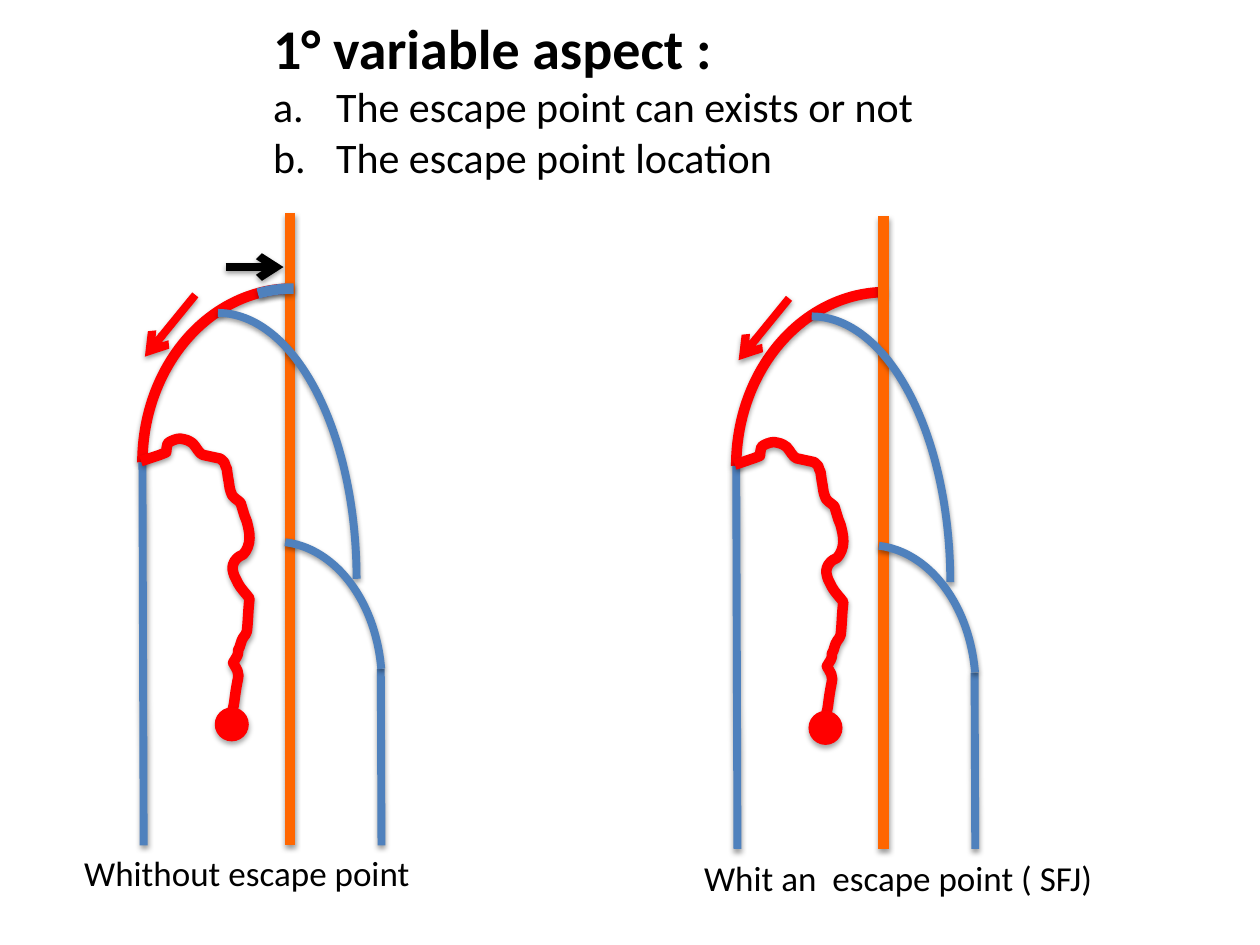
from dataclasses import dataclass
from typing import Optional

from lxml import etree
from pptx import Presentation
from pptx import util as u
from pptx.dml.color import RGBColor
from pptx.enum import shapes, text
from pptx.oxml.ns import qn


@dataclass(frozen=True)
class Theme:
    font: str = "Calibri"
    ink: str = "000000"
    reflux: str = "FF0000"
    deep: str = "FF6600"
    vein: str = "4F81BD"
    heading: float = 32
    item: float = 24
    caption: float = 20
    thick: float = 6
    thin: float = 4.5
    outline: float = 0.75


@dataclass(frozen=True)
class Vessel:
    start: tuple
    end: tuple
    color: str
    width: float
    arrow: bool = False


@dataclass(frozen=True)
class Arch:
    box: tuple
    color: str
    width: float
    flip: bool = False
    angles: Optional[tuple] = None


@dataclass(frozen=True)
class Paragraph:
    content: str
    size: float
    bold: bool = False
    lettered: bool = False


@dataclass(frozen=True)
class Diagram:
    dx: float
    dy: float
    caption: str
    caption_box: tuple
    extras: tuple = ()


THEME = Theme()
TRUNK_ARCH_BOX = (81.4, 164.9, 171.4, 198.7)

ANATOMY = (
    Arch(TRUNK_ARCH_BOX, THEME.reflux, THEME.thick, flip=True),
    Vessel((165.6, 121.7), (165.6, 483.1), THEME.deep, THEME.thick),
    Arch((45.4, 178.8, 158.4, 303.8), THEME.vein, THEME.thin),
    Vessel((81.4, 264.2), (82.1, 483.1), THEME.vein, THEME.thin),
    Vessel((217.6, 382.3), (218, 483.1), THEME.vein, THEME.thin),
    Arch((97.2, 309.6, 121, 163.4), THEME.vein, THEME.thin, angles=(164.21, 210.86)),
)
REFLUX_ARROW = Vessel((111.6, 168.5), (82.8, 203.8), THEME.reflux, THEME.thin, arrow=True)
COMPETENT_JUNCTION = (
    Arch((82.1, 164.9, 171.4, 198.7), THEME.vein, THEME.thick, flip=True, angles=(162, 169.17)),
    Vessel((128.9, 152.6), (162, 152.6), THEME.ink, THEME.thin, arrow=True),
)
ENTRY_POINT = (123.1, 404.6, 18.7, 18.7)

VARICOSE_START = (80.6, 263.5)
VARICOSE_PATH = (
    ((91.4, 259.9),),
    ((95, 258.5),),
    ((95.4, 257), (95, 254.9), (95.8, 253.4)),
    ((97.2, 252), (100.8, 250.6), (103, 250.6)),
    ((106.6, 251.3), (107.3, 251.3), (110.2, 253.4)),
    ((112.3, 255.6), (113.8, 259.2), (115.9, 259.9)),
    ((126, 262.1),),
    ((126.7, 262.8), (127.4, 263.5), (128.2, 264.2)),
    ((128.9, 265.7), (128.9, 267.1), (129.6, 267.8)),
    ((129.6, 269.3), (130.3, 271.4), (130.3, 272.9)),
    ((131, 275.8), (131, 278.6), (131.8, 280.8)),
    ((132.5, 284.4), (135.4, 285.1), (137.5, 287.3)),
    ((139.7, 294.5),),
    ((141.1, 298.1),),
    ((141.8, 301), (142.6, 303.8), (142.6, 307.4)),
    ((142.6, 311), (141.1, 314.6), (139, 316.8)),
    ((137.5, 317.5), (136.1, 318.2), (135.4, 319)),
    ((134.6, 320.4), (133.2, 321.1), (133.2, 322.6)),
    ((132.5, 324.7), (133.2, 326.9), (133.9, 329)),
    ((134.6, 330.5), (135.4, 331.9), (136.1, 333.4)),
    ((137.5, 336.2), (141.1, 339.8), (142.6, 342)),
    ((141.8, 348.5), (141.8, 355), (141.1, 360.7)),
    ((141.1, 362.2), (139.7, 362.9), (139, 364.3)),
    ((137.5, 366.5), (137.5, 369.4), (136.1, 371.5)),
    ((136.1, 373), (136.1, 374.4), (135.4, 375.1)),
    ((133.2, 378.7),),
    ((138.2, 387.4), (136.1, 382.3), (133.9, 401)),
    ((133.9, 402.5), (133.2, 403.9), (133.2, 404.6)),
    ((132.5, 407.5), (133.2, 409.7), (133.2, 411.8)),
)

DIAGRAMS = (
    Diagram(0, 0, "Whithout escape point", (41, 483.1, 202.3, 31.5), COMPETENT_JUNCTION),
    Diagram(339.3, 2, "Whit an  escape point ( SFJ)", (395.3, 486, 239.8, 31.5)),
)
HEADING = (
    Paragraph("1° variable aspect :", THEME.heading, bold=True),
    Paragraph("The escape point can exists or not", THEME.item, lettered=True),
    Paragraph("The escape point location", THEME.item, lettered=True),
)


def add_shadow(item, opacity: int = 38, distance: float = 1.6) -> None:
    properties = item._element.spPr
    effects = properties.find(qn("a:effectLst"))
    if effects is None:
        effects = etree.SubElement(properties, qn("a:effectLst"))
    shadow = etree.SubElement(effects, qn("a:outerShdw"), blurRad=str(u.Pt(3.1)),
                              dist=str(u.Pt(distance)), dir="5400000", rotWithShape="0")
    tint = etree.SubElement(shadow, qn("a:srgbClr"), val=THEME.ink)
    etree.SubElement(tint, qn("a:alpha"), val=str(opacity * 1000))


def stroke(item, color: str, width: float) -> None:
    item.line.color.rgb = RGBColor.from_string(color)
    item.line.width = u.Pt(width)


def draw_vessel(slide, vessel: Vessel, dx: float, dy: float) -> None:
    (x1, y1), (x2, y2) = vessel.start, vessel.end
    tube = slide.shapes.add_connector(shapes.MSO_CONNECTOR.STRAIGHT, u.Pt(x1 + dx), u.Pt(y1 + dy),
                                      u.Pt(x2 + dx), u.Pt(y2 + dy))
    stroke(tube, vessel.color, vessel.width)
    if vessel.arrow:
        etree.SubElement(tube.line._get_or_add_ln(), qn("a:tailEnd"), type="arrow")
    add_shadow(tube)


def add_preset(slide, preset, box: tuple, dx: float, dy: float):
    left, top, width, height = box
    item = slide.shapes.add_shape(preset, u.Pt(left + dx), u.Pt(top + dy), u.Pt(width), u.Pt(height))
    item.shadow.inherit = False
    return item


def draw_arch(slide, arch: Arch, dx: float, dy: float) -> None:
    curve = add_preset(slide, shapes.MSO_SHAPE.ARC, arch.box, dx, dy)
    curve.fill.background()
    stroke(curve, arch.color, arch.width)
    if arch.flip:
        curve._element.spPr.xfrm.set("flipH", "1")
    if arch.angles:
        curve.adjustments[0], curve.adjustments[1] = arch.angles
    add_shadow(curve)


def draw_varicose_vein(slide, dx: float, dy: float) -> None:
    def place(point: tuple) -> tuple:
        return u.Pt(point[0] + dx), u.Pt(point[1] + dy)

    builder = slide.shapes.build_freeform(*place(VARICOSE_START))
    builder.add_line_segments([place(p) for segment in VARICOSE_PATH for p in segment], close=False)
    vein = builder.convert_to_shape()
    steps = iter(list(vein._element.iter(qn("a:lnTo"))))
    for segment in VARICOSE_PATH:
        group = [next(steps) for _ in segment]
        if len(group) == 3:
            bend = etree.Element(qn("a:cubicBezTo"))
            group[0].addprevious(bend)
            for step in group:
                bend.append(step[0])
                step.getparent().remove(step)
    vein.shadow.inherit = False
    vein.fill.background()
    stroke(vein, THEME.reflux, THEME.thick)
    add_shadow(vein)


def draw_entry_point(slide, dx: float, dy: float) -> None:
    dot = add_preset(slide, shapes.MSO_SHAPE.OVAL, ENTRY_POINT, dx, dy)
    dot.fill.solid()
    dot.fill.fore_color.rgb = RGBColor.from_string(THEME.reflux)
    stroke(dot, THEME.reflux, THEME.outline)
    add_shadow(dot, opacity=35, distance=1.8)


def write(slide, box: tuple, paragraphs: tuple) -> None:
    frame = slide.shapes.add_textbox(*(u.Pt(v) for v in box)).text_frame
    frame.word_wrap = False
    frame.auto_size = text.MSO_AUTO_SIZE.SHAPE_TO_FIT_TEXT
    for index, entry in enumerate(paragraphs):
        line = frame.add_paragraph() if index else frame.paragraphs[0]
        line.text = entry.content
        line.font.name, line.font.size, line.font.bold = THEME.font, u.Pt(entry.size), entry.bold
        line.font.color.rgb = RGBColor.from_string(THEME.ink)
        if entry.lettered:
            layout = line._p.get_or_add_pPr()
            layout.set("marL", str(u.Pt(36)))
            layout.set("indent", str(-u.Pt(36)))
            layout.insert(0, etree.Element(qn("a:buAutoNum"), type="alphaLcPeriod"))


def draw_parts(slide, parts: tuple, dx: float, dy: float) -> None:
    for part in parts:
        (draw_arch if isinstance(part, Arch) else draw_vessel)(slide, part, dx, dy)


def draw_diagram(slide, diagram: Diagram) -> None:
    offset = diagram.dx, diagram.dy
    draw_parts(slide, ANATOMY, *offset)
    draw_varicose_vein(slide, *offset)
    draw_entry_point(slide, *offset)
    draw_parts(slide, (*diagram.extras, REFLUX_ARROW), *offset)
    write(slide, diagram.caption_box, (Paragraph(diagram.caption, THEME.caption),))


def main() -> None:
    deck = Presentation()
    deck.slide_width, deck.slide_height = u.Pt(720), u.Pt(540)
    slide = deck.slides.add_slide(deck.slide_layouts[6])
    write(slide, (149, 4.3, 383.8, 104.4), HEADING)
    for diagram in DIAGRAMS:
        draw_diagram(slide, diagram)
    deck.save("out.pptx")


if __name__ == "__main__":
    main()
